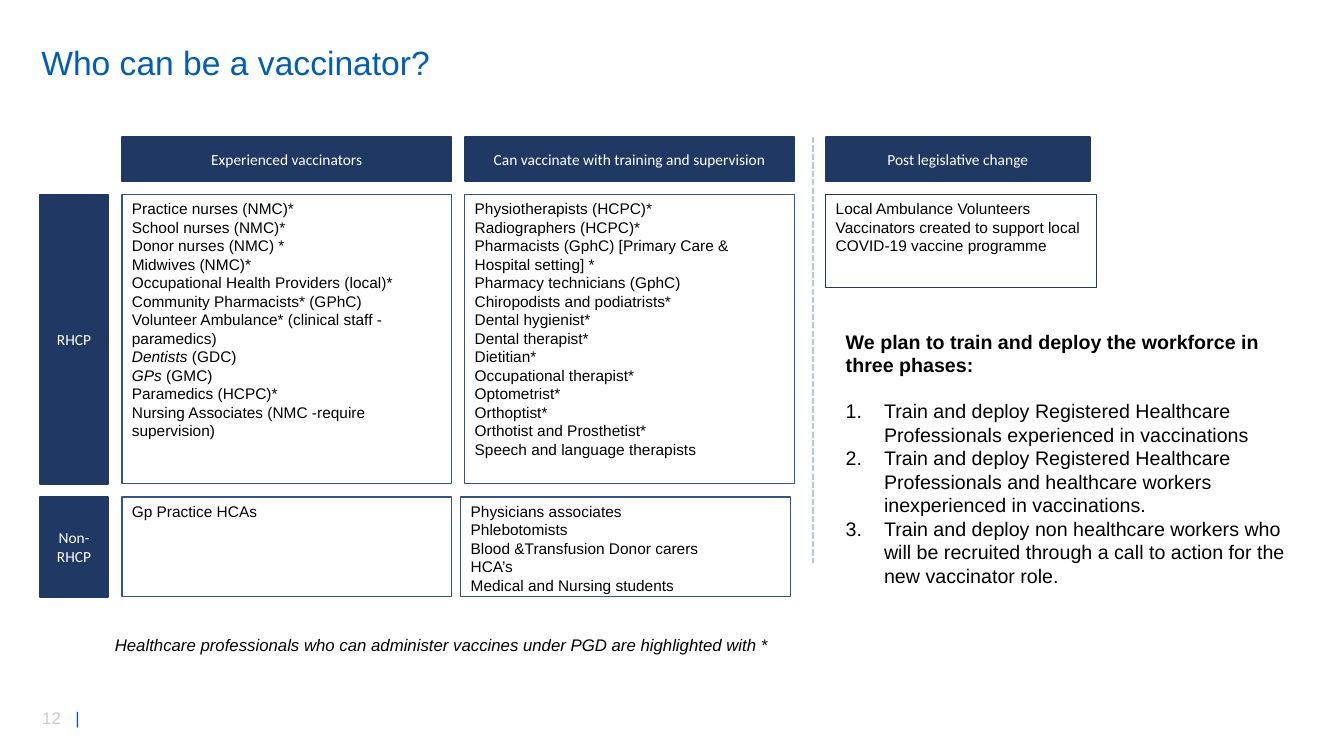
"""Build the slide on who can be a vaccinator."""
import pptx
import pptx.dml.color
import pptx.enum.dml
import pptx.enum.shapes
import pptx.enum.text
import pptx.oxml.ns
import pptx.util
from lxml import etree

Inches = pptx.util.Inches
Pt = pptx.util.Pt
RGBColor = pptx.dml.color.RGBColor
Align = pptx.enum.text.PP_ALIGN
Anchor = pptx.enum.text.MSO_ANCHOR
qn = pptx.oxml.ns.qn

NAVY = RGBColor(0x20, 0x38, 0x64)
FRAME = RGBColor(0x32, 0x54, 0x91)
BLUE = RGBColor(0x00, 0x5E, 0xB8)
PALE = RGBColor(0xB4, 0xC7, 0xE7)
GREY = RGBColor(0xC9, 0xC9, 0xC9)
BLACK = RGBColor(0, 0, 0)
WHITE = RGBColor(255, 255, 255)

COLUMNS = {"side": (0.4, 0.67), "experienced": (1.21, 3.27), "training": (4.61, 3.27),
           "training low": (4.57, 3.27), "change": (8.19, 2.62), "change wide": (8.19, 2.69)}
ROWS = {"head": (1.36, 0.44), "rhcp": (1.93, 2.87), "volunteers": (1.93, 0.92),
        "non-rhcp": (4.93, 0.99)}

LABELS = [
    ("experienced", "head", "Experienced vaccinators"),
    ("training", "head", "Can vaccinate with training and supervision"),
    ("change", "head", "Post legislative change"),
    ("side", "rhcp", "RHCP"),
    ("side", "non-rhcp", "Non-RHCP"),
]
LISTS = [
    ("experienced", "rhcp", FRAME, 1, [
        "Practice nurses (NMC)*", "School nurses (NMC)*", "Donor nurses (NMC) *",
        "Midwives (NMC)*", "Occupational Health Providers (local)*",
        "Community Pharmacists* (GPhC)", "Volunteer Ambulance* (clinical staff - paramedics)",
        ("Dentists", " (GDC)"), ("GPs ", "(GMC)"), "Paramedics (HCPC)*",
        "Nursing Associates (NMC -require supervision)"]),
    ("training", "rhcp", FRAME, 1, [
        "Physiotherapists (HCPC)*", "Radiographers (HCPC)*",
        "Pharmacists (GphC) [Primary Care & Hospital setting] *",
        "Pharmacy technicians (GphC)", "Chiropodists and podiatrists*",
        "Dental hygienist*", "Dental therapist*", "Dietitian*",
        "Occupational therapist*", "Optometrist*", "Orthoptist*",
        "Orthotist and Prosthetist*", "Speech and language therapists"]),
    ("experienced", "non-rhcp", FRAME, 1, ["Gp Practice HCAs"]),
    ("training low", "non-rhcp", FRAME, 1, [
        "Physicians associates", "Phlebotomists", "Blood &Transfusion Donor carers",
        "HCA’s", "Medical and Nursing students"]),
    ("change wide", "volunteers", NAVY, 0.75, [
        "Local Ambulance Volunteers",
        "Vaccinators created to support local COVID-19 vaccine programme"]),
]
PHASES = [
    "Train and deploy Registered Healthcare Professionals experienced in vaccinations",
    "Train and deploy Registered Healthcare Professionals and healthcare workers "
    "inexperienced in vaccinations.",
    "Train and deploy non healthcare workers who will be recruited through a call to "
    "action for the new vaccinator role.",
]


def add_span(para, text, size, color=BLACK, font="Arial", bold=False, italic=False):
    """Add one formatted run to a paragraph."""
    span = para.add_run()
    span.text = text
    span.font.name, span.font.size = font, Pt(size)
    span.font.bold, span.font.italic = bold, italic
    span.font.color.rgb = color


def next_para(frame, index):
    """Return the first paragraph for index 0 and a new one after that."""
    return frame.add_paragraph() if index else frame.paragraphs[0]


def add_cell(page, column, row, fill, line, width, anchor):
    """Add a rectangle at a grid place and return its text frame."""
    (left, wide), (top, high) = COLUMNS[column], ROWS[row]
    box = page.shapes.add_shape(pptx.enum.shapes.MSO_SHAPE.RECTANGLE,
                                Inches(left), Inches(top), Inches(wide), Inches(high))
    box.shadow.inherit = False
    box.fill.solid()
    box.fill.fore_color.rgb = fill
    box.line.color.rgb = line
    box.line.width = Pt(width)
    box.text_frame.word_wrap = True
    box.text_frame.vertical_anchor = anchor
    return box.text_frame


def add_label(page, column, row, text):
    """Add a navy heading cell."""
    para = add_cell(page, column, row, NAVY, NAVY, 1.25, Anchor.MIDDLE).paragraphs[0]
    para.alignment = Align.CENTER
    add_span(para, text, 11, WHITE, "Calibri")


def add_list(page, column, row, line, width, items):
    """Add a white cell of lines; a pair has its first part in italics."""
    frame = add_cell(page, column, row, WHITE, line, width, Anchor.TOP)
    for index, item in enumerate(items):
        para = next_para(frame, index)
        para.alignment = Align.LEFT
        if isinstance(item, tuple):
            add_span(para, item[0], 11, italic=True)
            add_span(para, item[1], 11)
        else:
            add_span(para, item, 11)


def add_text(page, left, top, width, height):
    """Add a wrapping text box and return its frame."""
    frame = page.shapes.add_textbox(Inches(left), Inches(top),
                                    Inches(width), Inches(height)).text_frame
    frame.word_wrap = True
    return frame


def add_title(page, text):
    """Place and format the title placeholder."""
    title = page.shapes.title
    title.left, title.top = Inches(0.31), Inches(0.31)
    title.width, title.height = Inches(10.43), Inches(0.67)
    title.text_frame.vertical_anchor = Anchor.MIDDLE
    para = title.text_frame.paragraphs[0]
    para.alignment = Align.LEFT
    para.line_spacing = 0.9
    add_span(para, text, 24, BLUE)


def add_divider(page):
    """Add the dashed vertical line before the last column."""
    x = Inches(8.06)
    divider = page.shapes.add_connector(pptx.enum.shapes.MSO_CONNECTOR.STRAIGHT,
                                        x, Inches(1.36), x, Inches(5.59))
    divider.line.color.rgb = PALE
    divider.line.width = Pt(1.5)
    divider.line.dash_style = pptx.enum.dml.MSO_LINE.SQUARE_DOT
    etree.SubElement(divider.element.spPr, qn("a:effectLst"))


def add_plan(page):
    """Add the bold lead-in and the numbered phases."""
    frame = add_text(page, 8.29, 3.22, 4.66, 2.69)
    lead = frame.paragraphs[0]
    lead.space_after = Pt(16)
    add_span(lead, "We plan to train and deploy the workforce in three phases:", 14, bold=True)
    for phase in PHASES:
        para = frame.add_paragraph()
        settings = para._p.get_or_add_pPr()
        settings.set("marL", str(Inches(0.38)))
        settings.set("indent", str(-Inches(0.38)))
        etree.SubElement(settings, qn("a:buFont"), typeface="+mj-lt")
        etree.SubElement(settings, qn("a:buAutoNum"), type="arabicPeriod")
        add_span(para, phase, 14)


def add_footnote(page):
    """Add the italic note below the grid."""
    frame = add_text(page, 1.04, 5.98, 9.58, 0.67)
    frame.vertical_anchor = Anchor.MIDDLE
    frame.margin_top = Inches(0.23)
    para = frame.paragraphs[0]
    para.line_spacing = 0.9
    add_span(para, "Healthcare professionals who can administer vaccines under PGD "
             "are highlighted with *", 12, italic=True)


def add_page_number(page):
    """Add the page number and its bar, set apart by a tab stop."""
    para = add_text(page, 0.32, 6.97, 0.71, 0.3).paragraphs[0]
    stops = etree.SubElement(para._p.get_or_add_pPr(), qn("a:tabLst"))
    etree.SubElement(stops, qn("a:tab"), pos=str(Inches(0.33)), algn="l")
    add_span(para, "12\t", 12, GREY)
    add_span(para, "|", 12, BLUE)


def main():
    """Build and save the deck."""
    deck = pptx.Presentation()
    deck.slide_width, deck.slide_height = Inches(13.33), Inches(7.5)
    page = deck.slides.add_slide(deck.slide_layouts[5])
    add_page_number(page)
    add_title(page, "Who can be a vaccinator?")
    for entry in LISTS:
        add_list(page, *entry)
    for entry in LABELS:
        add_label(page, *entry)
    add_divider(page)
    add_footnote(page)
    add_plan(page)
    deck.save("out.pptx")


if __name__ == "__main__":
    main()
